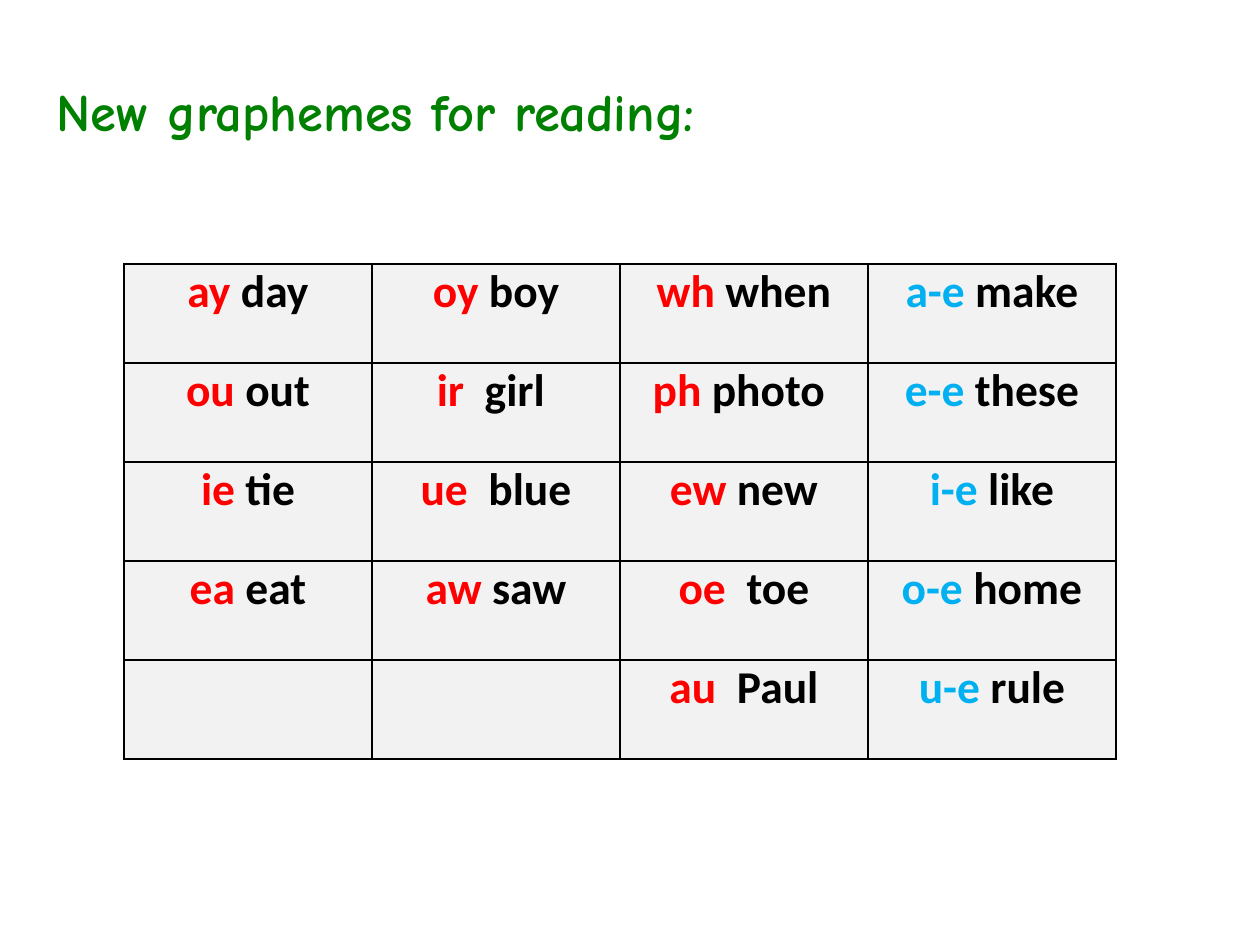
from lxml import etree
from pptx import Presentation
from pptx import util as u
from pptx.dml.color import RGBColor
from pptx.enum import text
from pptx.oxml.ns import qn

PX = 914400 / 126
COLORS = {"title": "008000", "digraph": "FF0000", "split": "00B0F0",
          "word": "000000", "cell": "F2F2F2", "border": "000000"}
GRAPHEMES = [
    ["ay day", "oy boy", "wh when", "a-e make"],
    ["ou out", "ir  girl ", "ph photo ", "e-e these"],
    ["ie tie", "ue  blue", "ew new", "i-e like"],
    ["ea eat", "aw saw", "oe  toe", "o-e home"],
    ["", "", "au  Paul", "u-e rule"],
]
COL_WIDTH, ROW_HEIGHT = 248, 99


def px(n):
    return u.Emu(round(n * PX))


def style(run, font, size, color):
    run.font.name = font
    run.font.size = u.Pt(size)
    run.font.bold = True
    run.font.color.rgb = RGBColor.from_string(COLORS[color])


prs = Presentation()
prs.slide_width, prs.slide_height = px(1260), px(945)
slide = prs.slides.add_slide(prs.slide_layouts[6])

# Grapheme grid
row_count, col_count = len(GRAPHEMES), len(GRAPHEMES[0])
grid = slide.shapes.add_table(row_count, col_count, px(124), px(264),
                              px(COL_WIDTH * col_count), px(ROW_HEIGHT * row_count)).table
grid.first_row = grid.horz_banding = False
for column in grid.columns:
    column.width = px(COL_WIDTH)
for row in grid.rows:
    row.height = px(ROW_HEIGHT)

for r, entries in enumerate(GRAPHEMES):
    for c, entry in enumerate(entries):
        cell = grid.cell(r, c)
        cell.margin_left = cell.margin_right = px(9)
        cell.margin_top = cell.margin_bottom = 0
        props = cell._tc.get_or_add_tcPr()
        for side in ("lnL", "lnR", "lnT", "lnB"):
            border = etree.SubElement(props, qn(f"a:{side}"), w=str(u.Pt(1)))
            border_fill = etree.SubElement(border, qn("a:solidFill"))
            etree.SubElement(border_fill, qn("a:srgbClr"), val=COLORS["border"])
        cell.fill.solid()
        cell.fill.fore_color.rgb = RGBColor.from_string(COLORS["cell"])
        if entry:
            line = cell.text_frame.paragraphs[0]
            line.alignment = text.PP_ALIGN.CENTER
            grapheme = entry.split()[0]
            for part, color in ((grapheme, "split" if "-" in grapheme else "digraph"),
                                (entry[len(grapheme):], "word")):
                run = line.add_run()
                run.text = part
                style(run, "Calibri", 26, color)

# Title
title = slide.shapes.add_textbox(px(44), px(72), px(774), px(77)).text_frame
title.word_wrap = True
title.auto_size = text.MSO_AUTO_SIZE.SHAPE_TO_FIT_TEXT
title.vertical_anchor = text.MSO_ANCHOR.MIDDLE
title.text = "New graphemes for reading:"
style(title.paragraphs[0].runs[0], "Comic Neue", 30, "title")

prs.save("out.pptx")
